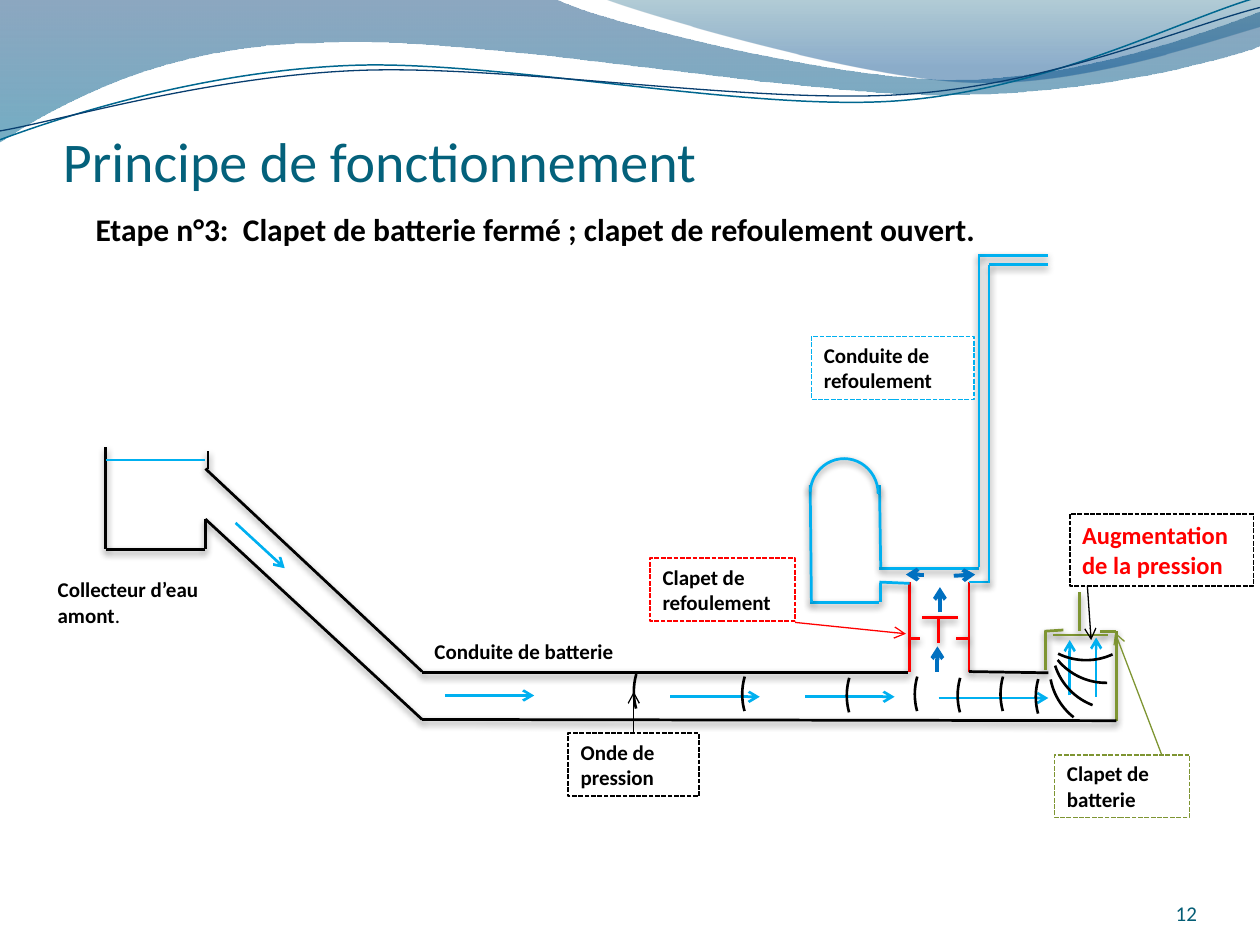
import math

from lxml import etree
from pptx import Presentation
from pptx import util as u
from pptx.dml.color import RGBColor
from pptx.enum import dml, shapes, text
from pptx.oxml import ns

COLORS = {
    "title": "04617B", "number": "045D75", "black": "000000", "white": "FFFFFF",
    "red": "FF0000", "green": "7E9532", "water": "00B0F0", "flow": "0070C0",
    "wave_teal": "00678F", "wave_navy": "083E6F",
    "band_top": "003E76", "band_bottom": "006A93",
    "crest_top": "005778", "crest_bottom": "004A8C",
}
FONT = "Calibri"
PIPE, WATER, LEADER, FLOW = 1.57, 1.5, 0.75, 2.25
WAVE_TILT = -2.7

BAND = [[(0, -0.01)], [(4.4, -0.01)],
        [(4.76, 0.17), (6.64, 0.63), (7.58, 0.63)],
        [(8.53, 0.63), (9.58, 0.26), (10, 0.09)], [(10.01, 0.36)],
        [(9.83, 0.44), (8.7, 0.76), (7.46, 0.75)],
        [(6.22, 0.75), (3.82, 0.28), (2.57, 0.34)],
        [(1.29, 0.35), (0.46, 0.83), (-0.01, 1.13)]]
CREST = [[(4.79, -0.01)], [(5.09, 0.11), (6.82, 0.62), (7.69, 0.65)],
         [(8.56, 0.69), (9.61, 0.32), (10, 0.21)], [(10, 0)]]
TEAL_WAVE = [[(0, 1.11)], [(0.48, 0.93), (1.58, 0.57), (2.77, 0.52)],
             [(3.95, 0.47), (5.93, 0.89), (7.13, 0.8)],
             [(8.33, 0.71), (9.38, 0.15), (9.98, -0.02)]]
NAVY_WAVE = [[(0, 1.04)], [(0.47, 0.96), (1.64, 0.61), (2.83, 0.56)],
             [(4.03, 0.51), (5.97, 0.83), (7.17, 0.75)],
             [(8.36, 0.67), (9.41, 0.21), (10, 0.06)]]

PIPES = {
    "red": [(7.69, 4.62, 7.69, 5.33), (7.22, 4.62, 7.22, 5.33), (7.32, 4.9, 7.6, 4.9),
            (7.22, 5.07, 7.3, 5.07), (7.59, 5.07, 7.69, 5.07), (7.45, 4.9, 7.45, 5.1)],
    "green": [(8.86, 5.01, 8.86, 5.72), (8.44, 5, 8.29, 5.01), (8.73, 5.01, 8.86, 5.01),
              (8.3, 5.01, 8.3, 5.32), (8.36, 5.04, 8.79, 5.04), (8.57, 4.7, 8.57, 5.01)],
    "black": [(0.84, 3.55, 0.84, 4.36), (0.84, 4.36, 1.63, 4.36), (1.63, 4.12, 1.63, 4.36),
              (1.63, 4.12, 3.35, 5.71), (1.63, 3.72, 3.35, 5.33), (1.65, 3.58, 1.65, 3.72),
              (3.35, 5.71, 8.86, 5.72), (3.35, 5.34, 7.21, 5.34), (7.69, 5.33, 8.32, 5.34)],
    "water": [(6.98, 4.62, 7.22, 4.63), (6.98, 4.51, 7.77, 4.51), (7.69, 4.62, 7.85, 4.62),
              (7.77, 2.03, 8.32, 2.03), (7.85, 2.1, 8.32, 2.1), (7.77, 2.02, 7.77, 4.5),
              (6.99, 4.63, 6.99, 4.78), (6.43, 4.78, 6.98, 4.78), (6.43, 3.85, 6.44, 4.78),
              (6.98, 3.85, 6.99, 4.5), (7.85, 2.1, 7.85, 4.63)],
}
WATER_ARROWS = [(1.87, 4.15, 2.26, 4.51), (3.53, 5.52, 4.24, 5.52), (5.32, 5.53, 6.03, 5.53),
                (6.39, 5.53, 7.1, 5.53), (7.45, 5.54, 8.32, 5.54),
                (8.7, 5.53, 8.7, 5.06), (8.49, 5.52, 8.49, 5.08)]
FLOW_ARROWS = [(7.44, 5.33, 7.44, 5.13), (7.46, 4.86, 7.46, 4.66),
               (7.57, 4.57, 7.74, 4.56), (7.33, 4.56, 7.19, 4.56)]
TURNING_WAVES = [(8.12, 4.24, 0, 39.1), (8.28, 4.42, 24.1, 39.1),
                 (8.35, 4.63, 45.8, 39.1), (8.33, 4.8, 52.9, 45.16)]
PIPE_WAVES = [(8.22, 5.03), (7.94, 5.01), (7.6, 5.02), (7.26, 5.01),
              (6.72, 5.02), (5.89, 5.01), (5.03, 4.99)]


def rgb(name):
    """Return the named colour."""
    return RGBColor.from_string(COLORS[name])


def add_child(parent, tag, **attributes):
    """Append a DrawingML element with the given attributes."""
    return etree.SubElement(parent, ns.qn(tag), {key: str(value) for key, value in attributes.items()})


def set_shadow(shape, visible):
    """Replace the theme effect with a soft lower shadow or with none."""
    effects = add_child(shape._element.spPr, "a:effectLst")
    if visible:
        shadow = add_child(effects, "a:outerShdw", blurRad=u.Pt(4), dist=u.Pt(2),
                           dir=5400000, rotWithShape=0)
        add_child(add_child(shadow, "a:srgbClr", val=COLORS["black"]), "a:alpha", val=45000)


def set_line(shape, color, width):
    """Give a shape a solid outline."""
    shape.line.color.rgb = rgb(color)
    shape.line.width = u.Pt(width)


def add_line(slide, points, color, width=PIPE, shadow=False, arrow=False):
    """Add a straight connector, optionally with an arrowhead at its end."""
    connector = slide.shapes.add_connector(
        shapes.MSO_CONNECTOR.STRAIGHT, *(u.Inches(value) for value in points))
    set_line(connector, color, width)
    if arrow:
        add_child(connector.line._get_or_add_ln(), "a:tailEnd", type="arrow")
    set_shadow(connector, shadow)
    return connector


def add_arc(slide, box, start, end, color, width=WATER, rotation=0, shadow=False):
    """Add an open arc between two adjustment angles."""
    arc = slide.shapes.add_shape(shapes.MSO_SHAPE.ARC, *(u.Inches(value) for value in box))
    arc.adjustments[0], arc.adjustments[1] = start, end
    arc.rotation = rotation
    arc.fill.background()
    set_line(arc, color, width)
    set_shadow(arc, shadow)


def write_text(shape, content, size=12, color="black", bold=True, align=text.PP_ALIGN.LEFT,
               anchor=text.MSO_ANCHOR.TOP, insets=(0.1, 0.05, 0.1, 0.05), ending=""):
    """Write one formatted paragraph, with an optional regular ending."""
    frame = shape.text_frame
    frame.word_wrap = True
    frame.vertical_anchor = anchor
    frame.margin_left, frame.margin_top, frame.margin_right, frame.margin_bottom = map(u.Inches, insets)
    paragraph = frame.paragraphs[0]
    paragraph.alignment = align
    for words, weight in ((content, bold), (ending, False)):
        if words:
            run = paragraph.add_run()
            run.text = words
            run.font.name, run.font.size, run.font.bold = FONT, u.Pt(size), weight
            run.font.color.rgb = rgb(color)


def add_text(slide, box, content, **style):
    """Add a text box."""
    write_text(slide.shapes.add_textbox(*(u.Inches(value) for value in box)), content, **style)


def add_label(slide, box, content, border, **style):
    """Add a white label with a dashed border."""
    label = slide.shapes.add_shape(shapes.MSO_SHAPE.RECTANGLE, *(u.Inches(value) for value in box))
    label.fill.solid()
    label.fill.fore_color.rgb = rgb("white")
    set_line(label, border, 0.9)
    label.line.dash_style = dml.MSO_LINE.SQUARE_DOT
    label.shadow.inherit = False
    write_text(label, content, **style)
    return label


def add_outline(slide, outline, closed):
    """Add a freeform whose three-point segments are cubic curves."""
    outline = [[(u.Inches(x), u.Inches(y)) for x, y in segment] for segment in outline]
    builder = slide.shapes.build_freeform(*outline[0][0], scale=1.0)
    builder.add_line_segments([segment[-1] for segment in outline[1:]], close=closed)
    shape = builder.convert_to_shape()
    sides = list(shape._element.iter(ns.qn("a:lnTo")))
    for side, segment in zip(sides, outline[1:]):
        if len(segment) == 3:
            side.tag = ns.qn("a:cubicBezTo")
            for index, (x, y) in enumerate(segment[:2]):
                control = add_child(side, "a:pt", x=x - shape.left, y=y - shape.top)
                side.insert(index, control)
    shape.shadow.inherit = False
    return shape


def add_band(slide, outline, stops):
    """Add a borderless shape with a translucent vertical gradient."""
    shape = add_outline(slide, outline, True)
    shape.line.fill.background()
    shape.fill.gradient()
    shape.fill.gradient_angle = 270
    for stop, (position, color, opacity) in zip(shape.fill.gradient_stops, stops):
        stop.position = position
        stop.color.rgb = rgb(color)
        add_child(stop._gs.find(ns.qn("a:srgbClr")), "a:alpha", val=opacity * 1000)


def level(point, pivot):
    """Turn a point about a pivot to undo the tilt of the waves."""
    angle = math.radians(-WAVE_TILT)
    across, down = point[0] - pivot[0], point[1] - pivot[1]
    return (pivot[0] + across * math.cos(angle) - down * math.sin(angle),
            pivot[1] + across * math.sin(angle) + down * math.cos(angle))


def add_wave(slide, outline, color, width):
    """Add an unfilled wavy line, tilted as a whole."""
    pivot = [(first + last) / 2 for first, last in zip(outline[0][0], outline[-1][-1])]
    shape = add_outline(slide, [[level(point, pivot) for point in segment] for segment in outline], False)
    shape.rotation = WAVE_TILT
    shape.fill.background()
    set_line(shape, color, width)


def main():
    """Build the hydraulic ram slide."""
    presentation = Presentation()
    presentation.slide_width, presentation.slide_height = u.Inches(10), u.Inches(7.5)
    slide = presentation.slides.add_slide(presentation.slide_layouts[6])
    add_band(slide, BAND, [(0, "band_top", 45), (1, "band_bottom", 55)])
    add_band(slide, CREST, [(0, "crest_top", 30), (0.8, "crest_bottom", 45)])
    add_wave(slide, TEAL_WAVE, "wave_teal", 0.85)
    add_wave(slide, NAVY_WAVE, "wave_navy", 0.75)

    bottom = text.MSO_ANCHOR.BOTTOM
    add_text(slide, (0.5, 0.77, 9, 0.77), "Principe de fonctionnement", size=32, color="title",
             bold=False, anchor=bottom, insets=(0, 0.05, 0, 0))
    add_text(slide, (8.67, 6.95, 0.83, 0.4), "12", color="number", bold=False,
             align=text.PP_ALIGN.RIGHT, anchor=bottom, insets=(0, 0, 0, 0))
    add_text(slide, (0.66, 1.62, 8.11, 1.55),
             "Etape n°3:  Clapet de batterie fermé ; clapet de refoulement ouvert.", size=18)

    for color, segments in PIPES.items():
        for points in segments:
            add_line(slide, points, color, shadow=True)
    add_arc(slide, (6.43, 3.64, 0.54, 0.56), 110.2, 0, "water", PIPE, shadow=True)
    add_line(slide, (0.84, 3.65, 1.63, 3.65), "water", WATER)
    for points in WATER_ARROWS:
        add_line(slide, points, "water", WATER, arrow=True)
    for left, top, rotation, start in TURNING_WAVES:
        add_arc(slide, (left, top, 1, 1), start, 69.8, "black", rotation=rotation)
    for left, top in PIPE_WAVES:
        add_arc(slide, (left, top, 1, 1), 44.68, 63.74, "black", rotation=90)
    for points in FLOW_ARROWS:
        add_line(slide, points, "flow", FLOW, arrow=True)

    add_text(slide, (0.36, 4.53, 1.76, 0.5), "Collecteur d’eau amont", ending=".")
    add_text(slide, (3.35, 5.02, 2.44, 0.3), "Conduite de batterie")
    add_label(slide, (5.16, 4.43, 1.15, 0.5), "Clapet de refoulement", "red")
    add_label(slide, (8.37, 5.99, 1.07, 0.5), "Clapet de batterie", "green")
    add_label(slide, (6.44, 2.67, 1.29, 0.5), "Conduite de refoulement", "water")
    wave_label = add_label(slide, (4.51, 5.82, 1.04, 0.5), "Onde de pression", "black")
    add_label(slide, (8.49, 4.08, 1.46, 0.57), "Augmentation de la pression", "black",
              size=14, color="red")
    for points, color in (((6.31, 4.94, 7.19, 5.03), "red"), ((9.22, 5.99, 8.85, 5.02), "green"),
                          ((8.63, 4.65, 8.66, 5.08), "black")):
        add_line(slide, points, color, LEADER, arrow=True)
    wave_leader = add_line(slide, (5.03, 5.82, 5.03, 5.49), "black", LEADER, arrow=True)
    wave_leader.begin_connect(wave_label, 0)
    presentation.save("out.pptx")


if __name__ == "__main__":
    main()
